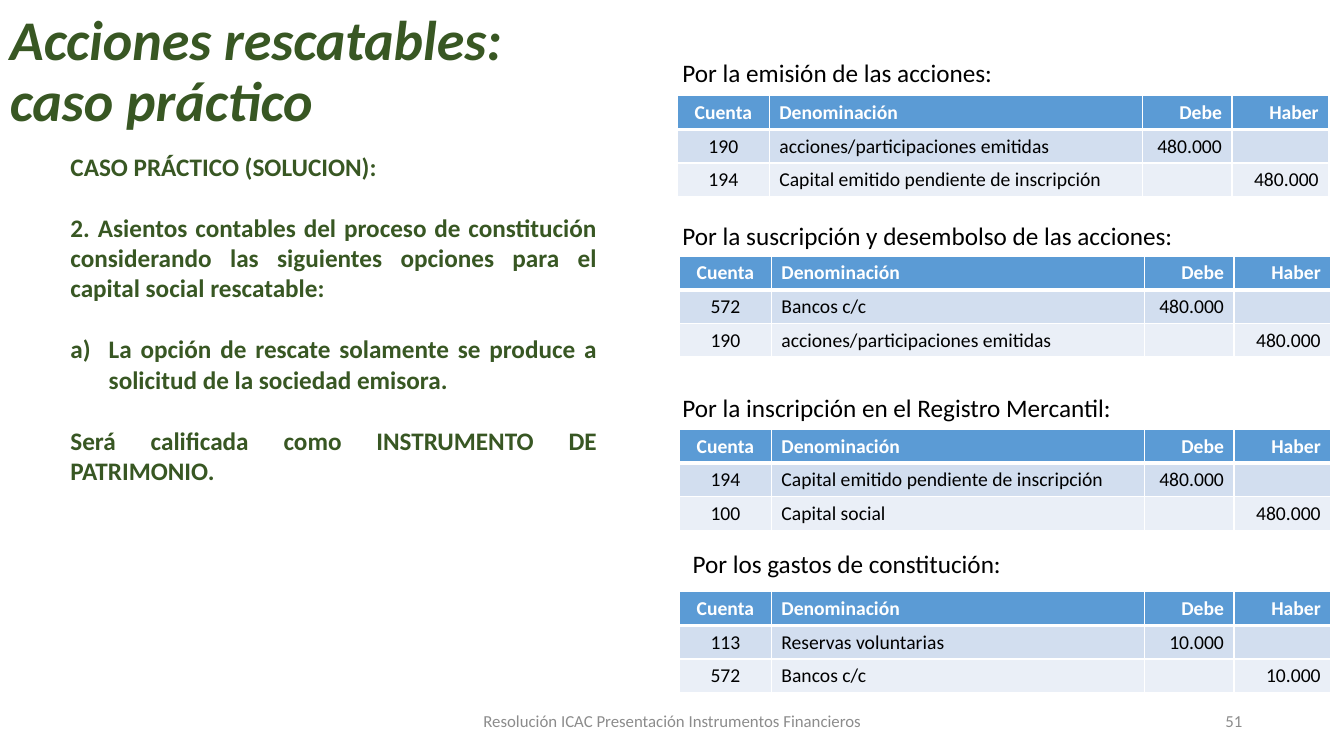
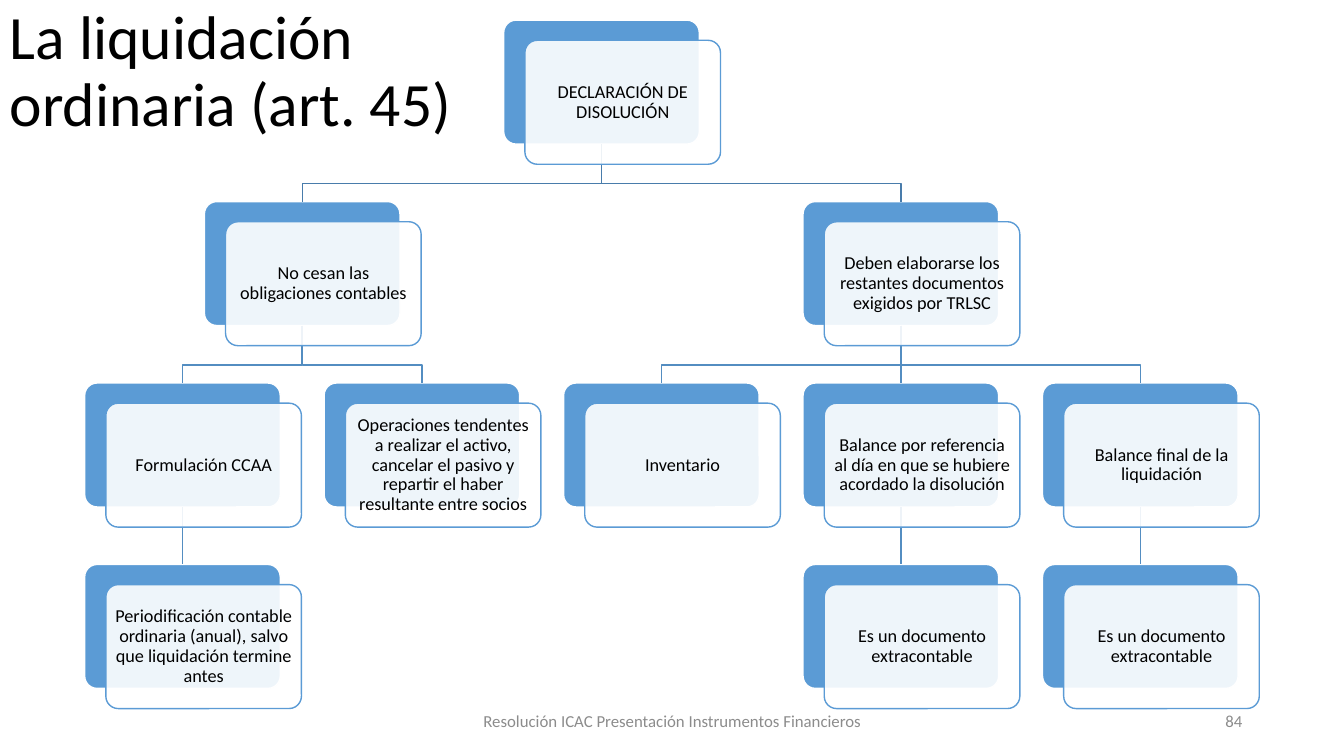
import lxml.etree
import pptx
import pptx.dml.color
import pptx.enum.shapes
import pptx.enum.text
import pptx.oxml.ns
import pptx.util

Inches = pptx.util.Inches
Pt = pptx.util.Pt
RGBColor = pptx.dml.color.RGBColor
ALIGN = pptx.enum.text.PP_ALIGN
MIDDLE = pptx.enum.text.MSO_ANCHOR.MIDDLE
SHAPES = pptx.enum.shapes.MSO_SHAPE
qn = pptx.oxml.ns.qn

FONT = "Calibri"
BLACK = RGBColor(0x00, 0x00, 0x00)
WHITE = RGBColor(0xFF, 0xFF, 0xFF)
GREEN = RGBColor(0x38, 0x57, 0x23)
GRAY = RGBColor(0x8C, 0x8C, 0x8C)
BLUE = RGBColor(0x5B, 0x9B, 0xD5)
BAND_DARK = RGBColor(0xD2, 0xDE, 0xEF)
BAND_LIGHT = RGBColor(0xEA, 0xEF, 0xF7)
BRANCH_TOP = RGBColor(0x49, 0x7C, 0xAB)
BRANCH = RGBColor(0x53, 0x8D, 0xC1)

FOOTER = "Resolución ICAC Presentación Instrumentos Financieros"

CASE_TEXT = [
    "CASO PRÁCTICO (SOLUCION):",
    "2. Asientos contables del proceso de constitución considerando las "
    "siguientes opciones para el capital social rescatable:",
    "La opción de rescate solamente se produce a solicitud de la sociedad emisora.",
    "Será calificada como INSTRUMENTO DE PATRIMONIO.",
]
LETTERED = 2  # index of the paragraph marked a)

LEDGER_COLUMNS = [
    ("Cuenta", 0.91, ALIGN.CENTER),
    ("Denominación", 3.7, ALIGN.LEFT),
    ("Debe", 0.89, ALIGN.RIGHT),
    ("Haber", 0.96, ALIGN.RIGHT),
]
ROW_HEIGHT = 0.33
ISSUED = "acciones/participaciones emitidas"
PENDING = "Capital emitido pendiente de inscripción"

# caption, caption left and top, table left and top, amount, debit, credit
ENTRIES = [
    ("Por la emisión de las acciones:", (6.67, 0.52), (6.72, 0.95),
     "480.000", ("190", ISSUED), ("194", PENDING)),
    ("Por la suscripción y desembolso de las acciones:", (6.67, 2.14), (6.74, 2.54),
     "480.000", ("572", "Bancos c/c"), ("190", ISSUED)),
    ("Por la inscripción en el Registro Mercantil:", (6.67, 3.84), (6.74, 4.26),
     "480.000", ("194", PENDING), ("100", "Capital social")),
    ("Por los gastos de constitución:", (6.77, 5.39), (6.74, 5.87),
     "10.000", ("113", "Reservas voluntarias"), ("572", "Bancos c/c")),
]

OFF_BOOKS = ("Es un documento extracontable", [])
DISSOLUTION = ("DECLARACIÓN DE DISOLUCIÓN", [
    ("No cesan las obligaciones contables", [
        ("Formulación CCAA", [
            ("Periodificación contable ordinaria (anual), salvo que "
             "liquidación termine antes", []),
        ]),
        ("Operaciones tendentes a realizar el activo, cancelar el pasivo y "
         "repartir el haber resultante entre socios", []),
    ]),
    ("Deben elaborarse los restantes documentos exigidos por TRLSC", [
        ("Inventario", []),
        ("Balance por referencia al día en que se hubiere acordado la disolución",
         [OFF_BOOKS]),
        ("Balance final de la liquidación", [OFF_BOOKS]),
    ]),
])
CARD_WIDTH, CARD_HEIGHT = 1.94, 1.23
COLUMN_PITCH, LEVEL_PITCH = 9.5 / 4, 1.8
FRONT_SHIFT = (0.21, 0.2)
ELBOW_DROP = 0.39


def format_runs(para, size, color, bold=False, italic=False):
    for span in para.runs:
        span.font.name = FONT
        span.font.size = Pt(size)
        span.font.color.rgb = color
        span.font.bold = bold
        span.font.italic = italic


def add_text(slide, box, text, size, color, align=ALIGN.LEFT, anchor=None,
             spacing=None, bold=False, italic=False):
    frame = slide.shapes.add_textbox(*map(Inches, box)).text_frame
    frame.word_wrap = True
    frame.vertical_anchor = anchor
    frame.text = text
    for para in frame.paragraphs:
        para.alignment = align
        para.line_spacing = spacing
        format_runs(para, size, color, bold, italic)
    return frame


def add_title(slide, width, text, size, color, emphasis=False):
    add_text(slide, (0, 0, width, 1.45), text, size, color, anchor=MIDDLE,
             spacing=0.9, bold=emphasis, italic=emphasis)


def add_footer(slide, number):
    for box, text, align in (((4.42, 6.95, 4.5, 0.4), FOOTER, ALIGN.CENTER),
                             ((9.42, 6.95, 3, 0.4), number, ALIGN.RIGHT)):
        add_text(slide, box, text, 12, GRAY, align, MIDDLE)


def add_case_text(slide, box):
    frame = add_text(slide, box, "\n".join(CASE_TEXT), 18, GREEN, ALIGN.JUSTIFY, bold=True)
    for para in frame.paragraphs[1:]:
        para.space_before = Pt(22)
    properties = frame.paragraphs[LETTERED]._p.get_or_add_pPr()
    properties.set("marL", str(Inches(0.38)))
    properties.set("indent", str(-Inches(0.38)))
    lxml.etree.SubElement(properties, qn("a:buFont"), typeface="+mj-lt")
    lxml.etree.SubElement(properties, qn("a:buAutoNum"), type="alphaLcParenR")


def set_borders(cell, top, bottom):
    """Draw white borders; the sides are 1 pt wide."""
    properties = cell._tc.get_or_add_tcPr()
    for tag, width in (("a:lnL", 1), ("a:lnR", 1), ("a:lnT", top), ("a:lnB", bottom)):
        line = lxml.etree.SubElement(properties, qn(tag), w=str(Pt(width)))
        fill = lxml.etree.SubElement(line, qn("a:solidFill"))
        lxml.etree.SubElement(fill, qn("a:srgbClr"), val=str(WHITE))


def add_ledger(slide, left, top, rows):
    width = sum(column[1] for column in LEDGER_COLUMNS)
    table = slide.shapes.add_table(
        len(rows), len(LEDGER_COLUMNS), Inches(left), Inches(top),
        Inches(width), Inches(ROW_HEIGHT * len(rows))).table
    for column, (_, column_width, _) in zip(table.columns, LEDGER_COLUMNS):
        column.width = Inches(column_width)
    fills = (BLUE, BAND_DARK, BAND_LIGHT)
    for r, row in enumerate(rows):
        header = r == 0
        for c, text in enumerate(row):
            cell = table.cell(r, c)
            set_borders(cell, 3 if r == 1 else 1, 3 if header else 1)
            cell.fill.solid()
            cell.fill.fore_color.rgb = fills[r]
            cell.text = text
            para = cell.text_frame.paragraphs[0]
            para.alignment = LEDGER_COLUMNS[c][2]
            format_runs(para, 14, WHITE if header else BLACK, header)
            if not text:
                lxml.etree.SubElement(para._p, qn("a:endParaRPr"), sz="1400")


def add_entry(slide, caption, caption_at, table_at, amount, debit, credit):
    add_text(slide, (*caption_at, 5.82, 0.4), caption, 18, BLACK)
    headings = [column[0] for column in LEDGER_COLUMNS]
    add_ledger(slide, *table_at, [headings, (*debit, amount, ""), (*credit, "", amount)])


def lay_out(node, level=0, first_leaf=0):
    """Return the node's cards, its own first, and the next free leaf column.

    A card is a dict of text, level, column and child cards.
    """
    text, branches = node
    cards, children, leaf = [], [], first_leaf
    for branch in branches:
        below, leaf = lay_out(branch, level + 1, leaf)
        children.append(below[0])
        cards += below
    if children:
        column = (children[0]["column"] + children[-1]["column"]) / 2
    else:
        column, leaf = first_leaf, first_leaf + 1
    own = {"text": text, "level": level, "column": column, "children": children}
    return [own] + cards, leaf


def add_card(slide, left, top, line_color):
    card = slide.shapes.add_shape(SHAPES.ROUNDED_RECTANGLE, Inches(left), Inches(top),
                                  Inches(CARD_WIDTH), Inches(CARD_HEIGHT))
    card.adjustments[0] = 0.1
    card.shadow.inherit = False
    card.fill.solid()
    card.line.color.rgb = line_color
    card.line.width = Pt(1)
    return card


def add_front_card(slide, left, top, text):
    card = add_card(slide, left, top, BLUE)
    card.fill.fore_color.rgb = WHITE
    color = card._element.spPr.find(qn("a:solidFill")).find(qn("a:srgbClr"))
    lxml.etree.SubElement(color, qn("a:alpha"), val="90000")
    frame = card.text_frame
    frame.word_wrap = True
    frame.vertical_anchor = MIDDLE
    frame.margin_left = frame.margin_right = Inches(0.05)
    frame.margin_top = frame.margin_bottom = Inches(0.05)
    frame.text = text
    para = frame.paragraphs[0]
    para.alignment = ALIGN.CENTER
    para.line_spacing = 0.9
    format_runs(para, 13, BLACK)


def add_branch(slide, parent, child, color):
    """Join two cards: straight when one is above the other, else with an elbow."""
    start_x, start_y = parent.left + parent.width // 2, parent.top + parent.height
    end_x, end_y = child.left + child.width // 2, child.top
    if start_x == end_x:
        branch = slide.shapes.add_connector(
            pptx.enum.shapes.MSO_CONNECTOR.STRAIGHT, start_x, start_y, end_x, end_y)
        branch.begin_connect(parent, 2)
        branch.end_connect(child, 0)
        lxml.etree.SubElement(branch._element.spPr, qn("a:effectLst"))
    else:
        elbow_y = start_y + Inches(ELBOW_DROP)
        outline = slide.shapes.build_freeform(start_x, start_y)
        outline.add_line_segments(
            [(start_x, elbow_y), (end_x, elbow_y), (end_x, end_y)], close=False)
        branch = outline.convert_to_shape()
        branch.shadow.inherit = False
        branch.fill.background()
    branch.line.color.rgb = color
    branch.line.width = Pt(1)


def add_tree(slide, left, top, root):
    cards, _ = lay_out(root)
    for card in cards:
        card["at"] = (left + card["column"] * COLUMN_PITCH, top + card["level"] * LEVEL_PITCH)
        card["back"] = add_card(slide, *card["at"], WHITE)
        card["back"].fill.fore_color.rgb = BLUE
    for card in cards:
        color = BRANCH if card["level"] else BRANCH_TOP
        for child in card["children"]:
            add_branch(slide, card["back"], child["back"], color)
    for card in cards:
        x, y = card["at"]
        add_front_card(slide, x + FRONT_SHIFT[0], y + FRONT_SHIFT[1], card["text"])


def build_case_slide(slide):
    add_title(slide, 6.13, "Acciones rescatables: caso práctico", 40, GREEN, emphasis=True)
    add_case_text(slide, (0.6, 1.45, 5.42, 4.64))
    for entry in ENTRIES:
        add_entry(slide, *entry)
    add_footer(slide, "51")


def build_liquidation_slide(slide):
    add_title(slide, 5.17, "La liquidación ordinaria (art. 45)", 44, BLACK)
    add_footer(slide, "84")
    add_tree(slide, 0.84, 0.2, DISSOLUTION)


def main():
    deck = pptx.Presentation()
    deck.slide_width, deck.slide_height = Inches(13.33), Inches(7.5)
    for build in (build_case_slide, build_liquidation_slide):
        build(deck.slides.add_slide(deck.slide_layouts[6]))
    deck.save("out.pptx")


if __name__ == "__main__":
    main()
